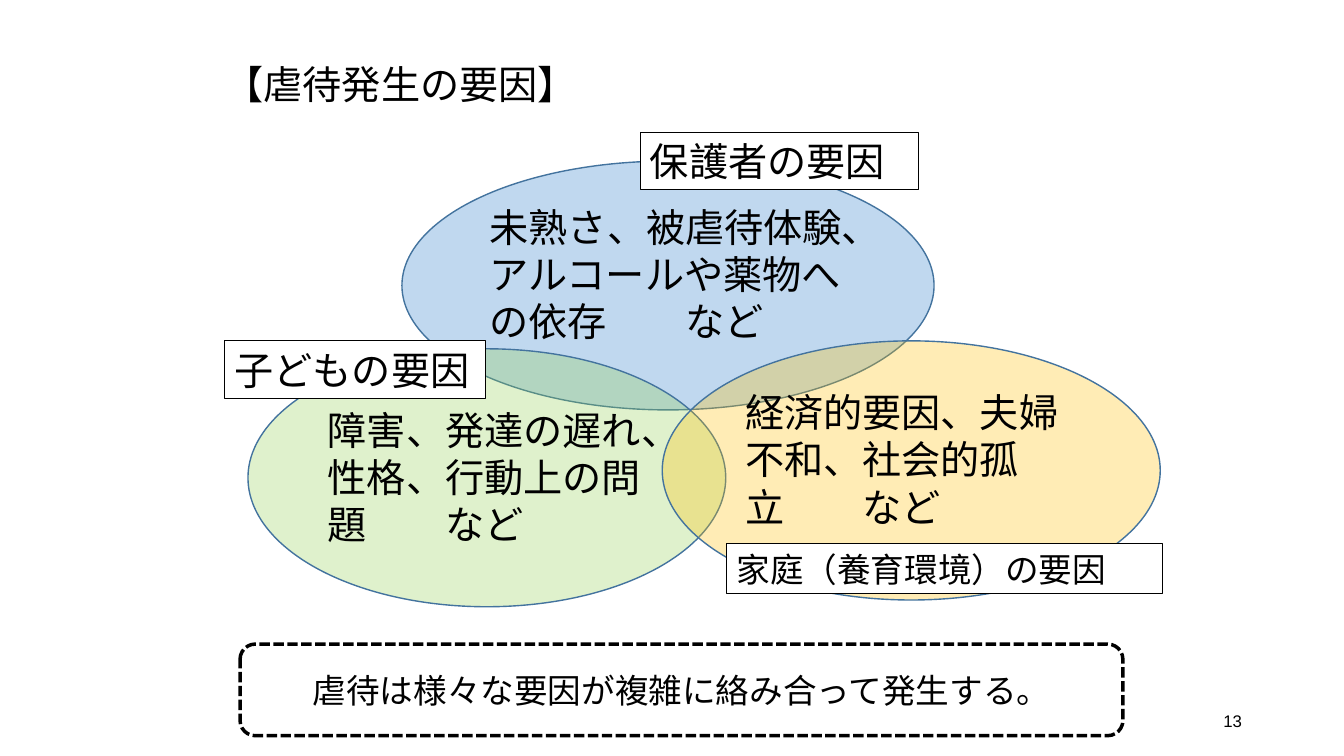
from dataclasses import dataclass

from lxml import etree
from pptx import Presentation
from pptx.dml.color import RGBColor
from pptx.enum.dml import MSO_LINE
from pptx.enum.shapes import MSO_SHAPE
from pptx.enum.text import MSO_ANCHOR, PP_ALIGN
from pptx.oxml.ns import qn
from pptx.util import Cm, Pt

ELLIPSE, RECTANGLE, ROUNDED = MSO_SHAPE.OVAL, MSO_SHAPE.RECTANGLE, MSO_SHAPE.ROUNDED_RECTANGLE
TOP, MIDDLE = MSO_ANCHOR.TOP, MSO_ANCHOR.MIDDLE
LEFT, CENTER, RIGHT = PP_ALIGN.LEFT, PP_ALIGN.CENTER, PP_ALIGN.RIGHT
DOTTED = MSO_LINE.SQUARE_DOT


@dataclass(frozen=True)
class Theme:
    ink: str = "000000"
    paper: str = "FFFFFF"
    outline: str = "43739E"
    parent: str = "5B9BD5"
    child: str = "92D050"
    family: str = "FFC000"
    japanese: str = "Noto Sans CJK JP"
    latin: str = "Arial"
    large: int = 28
    medium: int = 24
    small: int = 12


class FactorSlide:
    def __init__(self, page, theme):
        self.page = page
        self.theme = theme

    def add_words(self, shape, text, size, font, align=LEFT, anchor=TOP, top=0.13):
        frame = shape.text_frame
        frame.word_wrap = True
        frame.vertical_anchor = anchor
        frame.margin_left = frame.margin_right = Cm(0.25)
        frame.margin_top, frame.margin_bottom = Cm(top), Cm(0.13)
        para = frame.paragraphs[0]
        para.alignment = align
        span = para.add_run()
        span.text = text
        span.font.size = Pt(size)
        span.font.name = font
        span.font.color.rgb = RGBColor.from_string(self.theme.ink)
        east_asian = etree.SubElement(span.font._element, qn("a:ea"))
        east_asian.set("typeface", self.theme.japanese)
        return para

    def text(self, place, text, size, font, **layout):
        box = self.page.shapes.add_textbox(*map(Cm, place))
        return self.add_words(box, text, size, font, **layout)

    def shape(self, kind, place, line, width, fill=None, opacity=100):
        shape = self.page.shapes.add_shape(kind, *map(Cm, place))
        shape.shadow.inherit = False
        shape.line.color.rgb = RGBColor.from_string(line)
        shape.line.width = Pt(width)
        if fill is None:
            shape.fill.background()
        else:
            shape.fill.solid()
            shape.fill.fore_color.rgb = RGBColor.from_string(fill)
        if opacity < 100:
            color = shape._element.spPr.find(qn("a:solidFill"))[0]
            etree.SubElement(color, qn("a:alpha")).set("val", str(opacity * 1000))
        return shape

    def factor(self, place, color, opacity, text, top):
        ellipse = self.shape(ELLIPSE, place, self.theme.outline, 1, color, opacity)
        self.add_words(ellipse, text, self.theme.large, self.theme.japanese, top=top)

    def label(self, place, text, size):
        box = self.shape(RECTANGLE, place, self.theme.ink, 0.75, self.theme.paper)
        self.add_words(box, text, size, self.theme.latin)

    def conclusion(self, place, text):
        box = self.shape(ROUNDED, place, self.theme.ink, 2.5)
        box.line.dash_style = DOTTED
        self.add_words(box, text, self.theme.medium, self.theme.latin, CENTER, MIDDLE)


def main():
    theme = Theme()
    deck = Presentation()
    deck.slide_width, deck.slide_height = Cm(33.87), Cm(19.05)
    page = deck.slides.add_slide(deck.slide_layouts[6])
    slide = FactorSlide(page, theme)

    # Heading
    heading = slide.text((5.41, 1.52, 22.86, 1.5), "【虐待発生の要因】",
                         theme.large, theme.japanese)
    heading.line_spacing = 0.9

    # Overlapping factors, each followed by its label
    factors = [
        ((10.13, 4.06, 13.41, 6.27), theme.parent, 38,
         "未熟さ、被虐待体験、アルコールや薬物への依存　　など", 0.15,
         (16.13, 3.33, 7.01, 1.45), "保護者の要因", theme.large),
        ((6.25, 8.79, 12.04, 6.5), theme.child, 29,
         "障害、発達の遅れ、性格、行動上の問題　　など", 0.5,
         (5.66, 8.59, 6.58, 1.45), "子どもの要因", theme.large),
        ((16.69, 8.59, 12.55, 6.53), theme.family, 29,
         "経済的要因、夫婦不和、社会的孤立　　など", 0.25,
         (18.31, 13.69, 11, 1.27), "家庭（養育環境）の要因", theme.medium),
    ]
    for place, color, opacity, causes, top, label_place, name, size in factors:
        slide.factor(place, color, opacity, causes, top)
        slide.label(label_place, name, size)

    # Conclusion and page number
    slide.conclusion((6.05, 16.23, 22.25, 2.31), "虐待は様々な要因が複雑に絡み合って発生する。")
    slide.text((23.93, 17.65, 7.62, 1.02), "13", theme.small, theme.latin,
               align=RIGHT, anchor=MIDDLE)

    deck.save("out.pptx")


if __name__ == "__main__":
    main()
